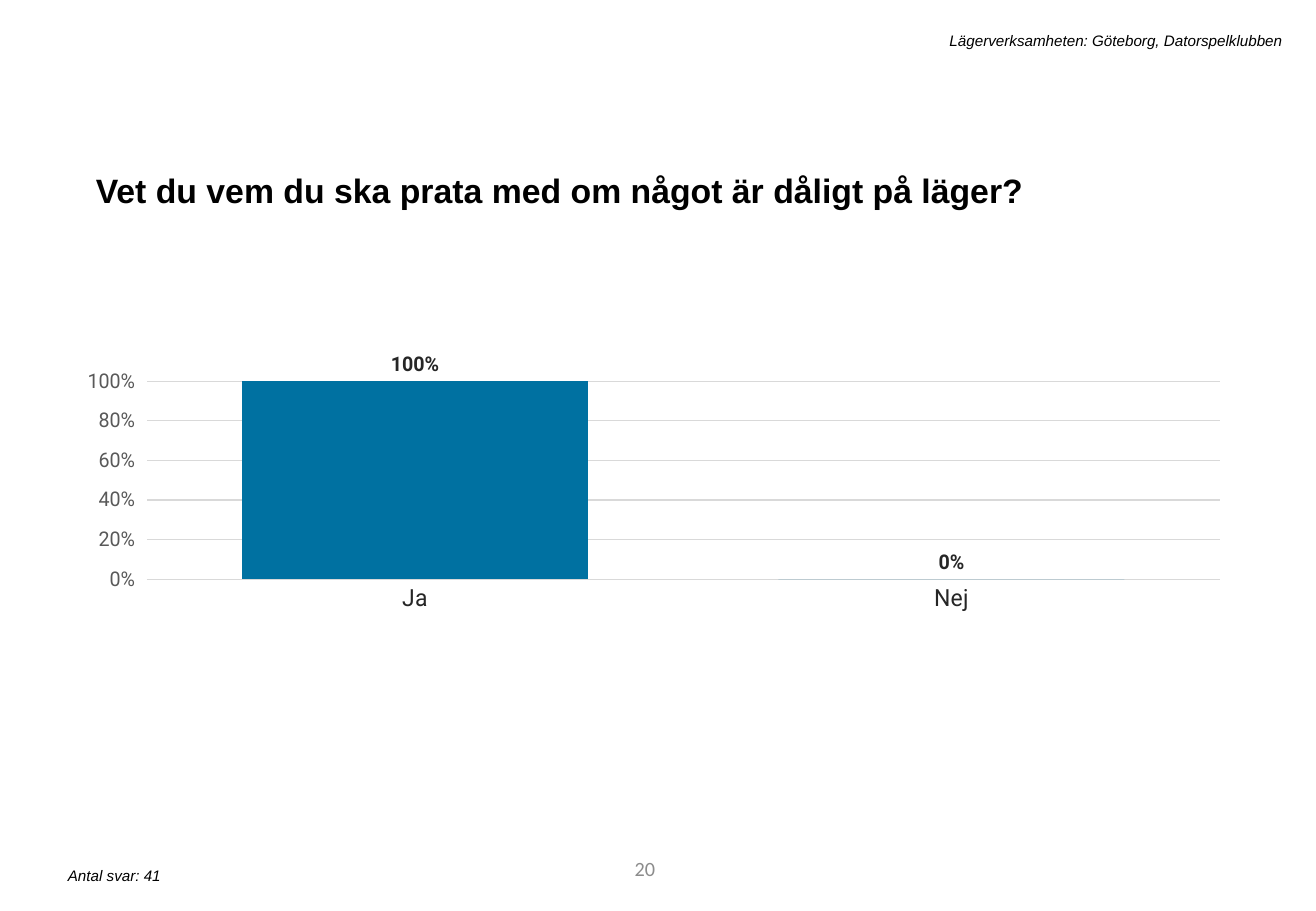
from lxml import etree
from pptx import Presentation
from pptx.chart.data import CategoryChartData
from pptx.dml.color import RGBColor
from pptx.enum.chart import XL_CHART_TYPE, XL_LABEL_POSITION, XL_TICK_MARK
from pptx.enum.text import MSO_ANCHOR, PP_ALIGN
from pptx.oxml.ns import qn
from pptx.util import Inches, Pt

COLUMNS = XL_CHART_TYPE.COLUMN_CLUSTERED
OUTSIDE_END = XL_LABEL_POSITION.OUTSIDE_END
NO_TICK = XL_TICK_MARK.NONE
LEFT, RIGHT = PP_ALIGN.LEFT, PP_ALIGN.RIGHT
TOP, MIDDLE = MSO_ANCHOR.TOP, MSO_ANCHOR.MIDDLE

BLACK = RGBColor(0x00, 0x00, 0x00)
DARK = RGBColor(0x26, 0x26, 0x26)
SCALE_GREY = RGBColor(0x59, 0x59, 0x59)
PAGE_GREY = RGBColor(0x8C, 0x8C, 0x8C)
GRID_GREY = RGBColor(0xD9, 0xD9, 0xD9)
BLUE = RGBColor(0x00, 0x71, 0xA1)

QUESTION = "Vet du vem du ska prata med om något är dåligt på läger?"
RESPONSES = "Antal svar: 41"
ACTIVITY = "Lägerverksamheten: Göteborg, Datorspelklubben"
PAGE_NUMBER = "20"
ANSWERS = {"Ja": 1, "Nej": 0}
PERCENT = "0%"
PLOT_LAYOUT = {"layoutTarget": "inner", "xMode": "edge", "yMode": "edge",
               "x": 0.025, "y": 0.154, "w": 0.966, "h": 0.413}


def style_font(font, size, color, name="Arial", bold=False, italic=False):
    font.name = name
    font.size = Pt(size)
    font.color.rgb = color
    font.bold = bold
    font.italic = italic


def add_text(slide, text, box, align=LEFT, anchor=TOP, line_spacing=None,
             space_before=0, **font_format):
    frame = slide.shapes.add_textbox(*map(Inches, box)).text_frame
    frame.word_wrap = True
    frame.vertical_anchor = anchor
    paragraph = frame.paragraphs[0]
    paragraph.alignment = align
    paragraph.space_before = Pt(space_before)
    if line_spacing:
        paragraph.line_spacing = line_spacing
    run = paragraph.add_run()
    run.text = text
    style_font(run.font, **font_format)


def place_plot(chart):
    plot_area = chart.element.find(".//" + qn("c:plotArea"))
    for previous in plot_area.findall(qn("c:layout")):
        plot_area.remove(previous)
    layout = etree.Element(qn("c:layout"))
    manual = etree.SubElement(layout, qn("c:manualLayout"))
    for tag, value in PLOT_LAYOUT.items():
        etree.SubElement(manual, qn("c:" + tag)).set("val", str(value))
    plot_area.insert(0, layout)


def add_answer_chart(slide, box):
    data = CategoryChartData(number_format=PERCENT)
    data.categories = list(ANSWERS)
    data.add_series("Series 1", list(ANSWERS.values()))
    chart = slide.shapes.add_chart(COLUMNS, *map(Inches, box), data).chart
    chart.has_title = False
    chart.has_legend = False
    style_font(chart.font, 10, BLACK, "Roboto")
    place_plot(chart)

    answer_axis = chart.category_axis
    answer_axis.major_tick_mark = NO_TICK
    answer_axis.format.line.color.rgb = GRID_GREY
    answer_axis.format.line.width = Pt(0.75)
    style_font(answer_axis.tick_labels.font, 14, DARK, "Roboto")

    share_axis = chart.value_axis
    share_axis.minimum_scale = 0
    share_axis.maximum_scale = 1
    share_axis.major_unit = 0.2
    share_axis.format.line.fill.background()
    share_axis.tick_labels.number_format = PERCENT
    share_axis.tick_labels.number_format_is_linked = False
    style_font(share_axis.tick_labels.font, 12, SCALE_GREY, "Roboto")
    gridline = share_axis.major_gridlines.format.line
    gridline.color.rgb = GRID_GREY
    gridline.width = Pt(0.75)

    plot = chart.plots[0]
    plot.gap_width = 55
    plot.vary_by_categories = False
    shares = plot.series[0]
    shares.format.fill.solid()
    shares.format.fill.fore_color.rgb = BLUE
    labels = shares.data_labels
    labels.show_value = True
    labels.position = OUTSIDE_END
    labels.number_format = PERCENT
    labels.number_format_is_linked = False
    style_font(labels.font, 12, DARK, "Roboto", bold=True)


def main():
    deck = Presentation()
    deck.slide_width = Inches(10.83)
    deck.slide_height = Inches(7.5)
    slide = deck.slides.add_slide(deck.slide_layouts[6])
    add_text(slide, PAGE_NUMBER, (3.05, 6.95, 2.44, 0.4), align=RIGHT,
             anchor=MIDDLE, size=12, color=PAGE_GREY, name="Calibri")
    add_text(slide, QUESTION, (0.69, 1.28, 9.4, 0.47), line_spacing=1.2,
             space_before=10, size=20, color=BLACK, bold=True)
    add_text(slide, RESPONSES, (0.46, 7.08, 4.41, 0.25),
             size=9, color=BLACK, italic=True)
    add_answer_chart(slide, (0.72, 2.53, 9.4, 3.95))
    add_text(slide, ACTIVITY, (1.79, 0.21, 8.86, 0.25), align=RIGHT,
             size=9, color=BLACK, italic=True)
    deck.save("out.pptx")


if __name__ == "__main__":
    main()
